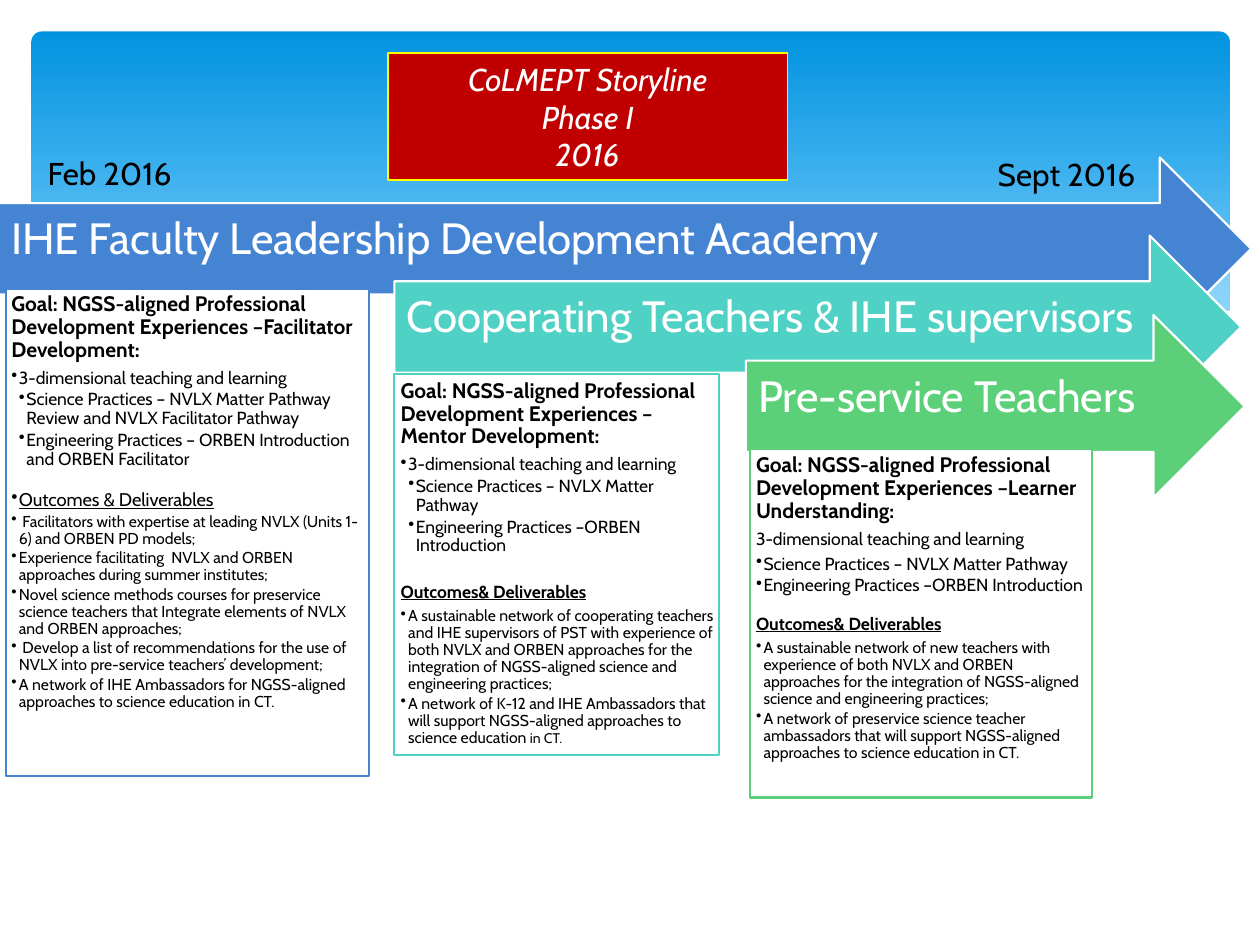
from dataclasses import dataclass

from lxml.etree import SubElement
from pptx import Presentation
from pptx.dml.color import RGBColor
from pptx.enum.shapes import MSO_SHAPE
from pptx.enum.text import MSO_ANCHOR, PP_ALIGN
from pptx.oxml.ns import qn
from pptx.util import Inches, Pt

FONT = "Cabin"
COLORS = {
    "white": "FFFFFF", "black": "000000", "red": "C00000", "yellow": "FFFF00",
    "sky_top": "0293E0", "sky_bottom": "83D3FE", "mist": "C6E7FC",
    "faculty": "4584D3", "mentor": "50D1C5", "learner": "5BD078",
}


@dataclass
class Line:
    text: str
    size: float = 9
    level: int = 1
    bold: bool = False
    underline: bool = False
    gap: float = 0
    tail: str = ""


@dataclass
class Stage:
    title: str
    color: str
    arrow: tuple
    label_width: float
    panel: tuple
    inset: float
    lines: list


@dataclass
class Wave:
    points: list
    color: str
    opacity: int = 100
    closed: bool = True


def rgb(name: str) -> RGBColor:
    return RGBColor.from_string(COLORS[name])


def style_paragraph(para, size: float, color: str, **flags) -> None:
    for span in para.runs:
        span.font.name = FONT
        span.font.size = Pt(size)
        span.font.color.rgb = rgb(color)
        for flag, value in flags.items():
            setattr(span.font, flag, value)


def add_block(slide, kind, place: tuple, fill: str, line: str, width: float):
    shape = slide.shapes.add_shape(kind, *map(Inches, place))
    shape.shadow.inherit = False
    shape.fill.solid()
    shape.fill.fore_color.rgb = rgb(fill)
    shape.line.color.rgb = rgb(line)
    shape.line.width = Pt(width)
    return shape


def set_insets(frame, left: float, top: float, right: float, bottom: float) -> None:
    frame.word_wrap = True
    frame.margin_left, frame.margin_top = Inches(left), Inches(top)
    frame.margin_right, frame.margin_bottom = Inches(right), Inches(bottom)


def add_label(slide, place: tuple, text: str, size: float, color: str):
    box = slide.shapes.add_textbox(*map(Inches, place))
    frame = box.text_frame
    frame.word_wrap = True
    frame.text = text
    style_paragraph(frame.paragraphs[0], size, color)
    return frame


def add_wave(slide, wave: Wave) -> None:
    points = [(Inches(x), Inches(y)) for x, y in wave.points]
    builder = slide.shapes.build_freeform(*points[0])
    builder.add_line_segments(points[1:], close=wave.closed)
    shape = builder.convert_to_shape()
    shape.shadow.inherit = False
    if not wave.closed:
        shape.fill.background()
        shape.line.color.rgb = rgb(wave.color)
        shape.line.width = Pt(0)
        return
    shape.line.fill.background()
    shape.fill.solid()
    shape.fill.fore_color.rgb = rgb(wave.color)
    color = shape.fill._xPr.find(qn("a:solidFill"))[0]
    SubElement(color, qn("a:alpha"), val=str(wave.opacity * 1000))


def write_line(para, line: Line) -> None:
    para.text = line.text
    para.alignment = PP_ALIGN.LEFT
    para.line_spacing = 0.9
    para.space_before = Pt(line.gap)
    para.space_after = Pt(line.size * (0.15 if line.level else 0.35))
    style_paragraph(para, line.size, "black", bold=line.bold, underline=line.underline)
    if line.tail:
        para.add_run().text = line.tail
        style_paragraph(para, line.size, "black")
        para.runs[-1].font.size = Pt(line.size - 1)
    if line.level:
        properties = para._p.get_or_add_pPr()
        properties.set("marL", str(Inches(0.06 * line.level)))
        properties.set("indent", str(Inches(-0.06)))
        SubElement(properties, qn("a:buChar"), char="•")


def add_stage(slide, stage: Stage) -> None:
    add_block(slide, MSO_SHAPE.RIGHT_ARROW, stage.arrow, stage.color, "white", 1.25)
    left, top, _, height = stage.arrow
    place = (left, top + height / 4, stage.label_width, height / 2)
    label = add_label(slide, place, stage.title, 25, "white")
    set_insets(label, 0.1, 0.1, 0.28, 0.23)
    label.vertical_anchor = MSO_ANCHOR.MIDDLE
    label.paragraphs[0].line_spacing = 0.9

    panel = add_block(slide, MSO_SHAPE.RECTANGLE, stage.panel, "white", stage.color, 1.25)
    frame = panel.text_frame
    set_insets(frame, *[stage.inset] * 4)
    frame.vertical_anchor = MSO_ANCHOR.TOP
    for index, line in enumerate(stage.lines):
        write_line(frame.add_paragraph() if index else frame.paragraphs[0], line)


def goal(audience: str) -> Line:
    text = f"Goal: NGSS-aligned Professional Development Experiences –{audience}:"
    return Line(text, 12, 0, bold=True)


def outcomes(gap: float) -> Line:
    return Line("Outcomes& Deliverables", 10, 0, bold=True, underline=True, gap=gap)


TOPIC = "3-dimensional teaching and learning"
MATTER = "Science Practices – NVLX Matter Pathway"
ENGINEERING = "Engineering Practices –ORBEN Introduction"

WAVES = [
    Wave([(9.76, 2), (9.48, 2.04), (9.06, 2.13), (8.61, 2.23), (8.05, 2.37), (7.29, 2.53),
          (6.61, 2.65), (7.19, 2.72), (7.69, 2.77), (8.14, 2.78), (8.63, 2.75),
          (9.05, 2.69), (9.42, 2.59), (9.76, 2.47)], "mist", 29),
    Wave([(8.92, 2.73), (8.37, 2.65), (7.75, 2.54), (7.06, 2.4), (6.29, 2.22), (5.69, 2.08),
          (5.14, 1.98), (4.65, 1.91), (4.2, 1.87), (3.7, 1.85), (3.28, 1.87), (2.86, 1.91),
          (3.42, 1.99), (4.04, 2.11), (4.91, 2.32), (5.66, 2.48), (6.34, 2.61), (6.95, 2.7),
          (7.48, 2.76), (8.07, 2.78), (8.57, 2.77)], "mist", 40),
    Wave([(3.09, 1.95), (3.53, 1.89), (4.01, 1.87), (4.69, 1.89), (5.33, 1.94), (6.08, 2.04),
          (6.95, 2.19), (7.95, 2.41), (9.07, 2.72)], "white", closed=False),
    Wave([(6.13, 2.57), (6.95, 2.35), (7.76, 2.16), (8.66, 1.99), (9.24, 1.9),
          (9.75, 1.85)], "white", closed=False),
    Wave([(9.77, 2.46), (9.5, 2.56), (9.1, 2.67), (8.63, 2.74), (8.09, 2.77), (7.44, 2.74),
          (6.68, 2.65), (5.79, 2.5), (5.03, 2.33), (4.18, 2.13), (3.4, 1.97), (2.71, 1.88),
          (2.11, 1.84), (1.61, 1.84), (1.06, 1.89), (0.59, 1.99), (0.23, 2.13),
          (0.23, 3.29), (9.77, 3.29)], "white"),
]

STAGES = [
    Stage("IHE Faculty Leadership Development Academy", "faculty",
          (-0.01, 1.25, 9.94, 1.45), 9.58, (0.05, 2.29, 2.88, 3.87), 0.04, [
              goal("Facilitator Development"),
              Line(TOPIC, 10),
              Line(f"{MATTER} Review and NVLX Facilitator Pathway", 10, 2),
              Line("Engineering Practices – ORBEN Introduction and ORBEN Facilitator", 10, 2),
              Line("Outcomes & Deliverables", 10.5, underline=True, gap=11),
              Line(" Facilitators with expertise at leading NVLX (Units 1-6) and ORBEN PD models;"),
              Line("Experience facilitating  NVLX and ORBEN approaches during summer institutes;"),
              Line("Novel science methods courses for preservice science teachers that Integrate "
                   "elements of NVLX and ORBEN approaches;"),
              Line(" Develop a list of recommendations for the use of NVLX into pre-service "
                   "teachers’ development;"),
              Line("A network of IHE Ambassadors for NGSS-aligned approaches to science "
                   "education in CT."),
          ]),
    Stage("Cooperating Teachers & IHE supervisors", "mentor",
          (3.13, 1.87, 6.72, 1.45), 6.36, (3.13, 2.97, 2.58, 3.02), 0.05, [
              goal("Mentor Development"),
              Line(TOPIC, 10), Line(MATTER, 10, 2), Line(ENGINEERING, 10, 2),
              outcomes(14),
              Line("A sustainable network of cooperating teachers and IHE supervisors of PST with "
                   "experience of both NVLX and ORBEN approaches for the integration of "
                   "NGSS-aligned science and engineering practices;"),
              Line("A network of K-12 and IHE Ambassadors that will support NGSS-aligned "
                   "approaches to science education ", tail="in CT."),
          ]),
    Stage("Pre-service Teachers", "learner",
          (5.92, 2.5, 3.96, 1.45), 3.6, (5.95, 3.56, 2.72, 2.77), 0.05, [
              goal("Learner Understanding"),
              Line(TOPIC, 10, 0), Line(MATTER, 10), Line(ENGINEERING, 10),
              outcomes(9.5),
              Line("A sustainable network of new teachers with experience of both NVLX and ORBEN "
                   "approaches for the integration of NGSS-aligned science and engineering "
                   "practices;"),
              Line("A network of preservice science teacher ambassadors that will support "
                   "NGSS-aligned approaches to science education in CT."),
          ]),
]


def main() -> None:
    deck = Presentation()
    deck.slide_width, deck.slide_height = Inches(10), Inches(7.5)
    slide = deck.slides.add_slide(deck.slide_layouts[6])

    sky = add_block(slide, MSO_SHAPE.ROUNDED_RECTANGLE, (0.25, 0.25, 9.51, 2.7),
                    "sky_top", "sky_top", 0)
    sky.adjustments[0] = 0.03
    sky.line.fill.background()
    sky.fill.gradient()
    sky.fill.gradient_angle = 270
    for stop, color, position in zip(sky.fill.gradient_stops, ("sky_top", "sky_bottom"), (0, 0.9)):
        stop.color.rgb = rgb(color)
        stop.position = position

    for wave in WAVES:
        add_wave(slide, wave)
    for stage in STAGES:
        add_stage(slide, stage)

    banner = add_block(slide, MSO_SHAPE.RECTANGLE, (3.08, 0.42, 3.17, 1.01), "red", "yellow", 0.75)
    banner.text_frame.text = "CoLMEPT Storyline\nPhase I\n2016"
    for para in banner.text_frame.paragraphs:
        para.alignment = PP_ALIGN.CENTER
        style_paragraph(para, 18, "white", italic=True)

    add_label(slide, (0.28, 1.17, 1.42, 0.4), "Feb 2016", 18, "black")
    add_label(slide, (7.82, 1.18, 1.33, 0.4), "Sept 2016", 18, "black")
    deck.save("out.pptx")


if __name__ == "__main__":
    main()
